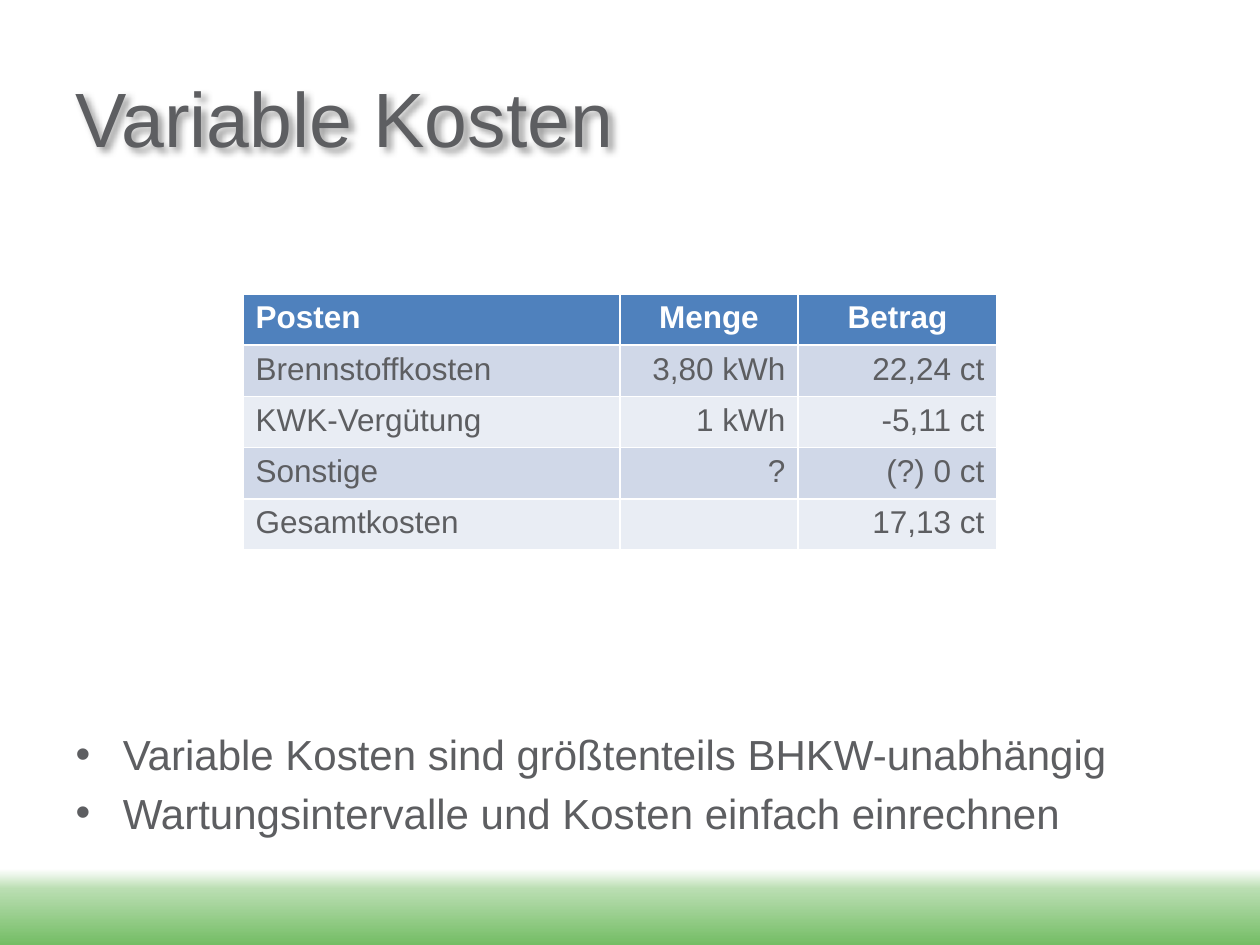
from copy import deepcopy

from lxml import etree
from pptx import Presentation
from pptx.dml.color import RGBColor
from pptx.enum.shapes import MSO_SHAPE
from pptx.enum.text import MSO_ANCHOR, PP_ALIGN
from pptx.oxml.ns import nsdecls, qn
from pptx.util import Emu, Pt

RECT = MSO_SHAPE.RECTANGLE
MIDDLE, BOTTOM = MSO_ANCHOR.MIDDLE, MSO_ANCHOR.BOTTOM
LEFT, CENTER, RIGHT = PP_ALIGN.LEFT, PP_ALIGN.CENTER, PP_ALIGN.RIGHT

PX_PER_INCH = 126
FONT = "Arial"
GREY, WHITE = "5D5E61", "FFFFFF"
HEADER_FILL, BAND_FILLS = "4F81BD", ("D0D8E8", "E9EDF4")
BAND_STOPS = [(0, WHITE), (0.26, "BADEB2"), (1, "74BD65")]
COLUMN_WIDTHS = (377, 178, 199)
ROWS = [
    ("Posten", "Menge", "Betrag"),
    ("Brennstoffkosten", "3,80 kWh", "22,24 ct"),
    ("KWK-Vergütung", "1 kWh", "-5,11 ct"),
    ("Sonstige", "?", "(?) 0 ct"),
    ("Gesamtkosten", "", "17,13 ct"),
]
BULLETS = [
    "Variable Kosten sind größtenteils BHKW-unabhängig",
    "Wartungsintervalle und Kosten einfach einrechnen",
]
TITLE_SHADOW = (
    f'<a:effectLst {nsdecls("a")}>'
    '<a:outerShdw blurRad="50800" dist="38100" dir="2700000" algn="tl" rotWithShape="0">'
    '<a:srgbClr val="000000"><a:alpha val="40000"/></a:srgbClr>'
    '</a:outerShdw></a:effectLst>'
)


def px(n):
    """Turn pixels into EMU."""
    return Emu(round(n * 914400 / PX_PER_INCH))


def rgb(value):
    """Turn a hex string into a colour."""
    return RGBColor.from_string(value)


def style(p, size, color, align=LEFT, bold=False):
    """Set the font and alignment of a paragraph."""
    p.alignment = align
    p.font.name = FONT
    p.font.size = Pt(size)
    p.font.bold = bold
    p.font.color.rgb = rgb(color)


def place(sp, box):
    """Move a shape into a pixel box."""
    sp.left, sp.top, sp.width, sp.height = map(px, box)


def add_footer_band(slide, box):
    """Draw the green gradient band behind everything else."""
    sp = slide.shapes.add_shape(RECT, *map(px, box))
    sp.shadow.inherit = False
    sp.line.fill.background()
    sp.fill.gradient()
    sp.fill.gradient_angle = 270
    stops = sp._element.spPr.find(".//" + qn("a:gsLst"))
    stops.append(deepcopy(stops[-1]))
    for stop, (position, color) in zip(sp.fill.gradient_stops, BAND_STOPS):
        stop.position = position
        stop.color.rgb = rgb(color)
    slide.shapes._spTree.insert(2, sp._element)


def add_title(slide, box, text):
    """Fill the title placeholder and give it a soft shadow."""
    sp = slide.shapes.title
    place(sp, box)
    tf = sp.text_frame
    tf.text = text
    tf.vertical_anchor = MIDDLE
    style(tf.paragraphs[0], 44, GREY)
    sp._element.spPr.append(etree.fromstring(TITLE_SHADOW))


def add_bullets(slide, box, lines):
    """Fill the body placeholder with bullets at its bottom."""
    sp = slide.placeholders[1]
    place(sp, box)
    tf = sp.text_frame
    tf.text = "\n".join(lines)
    tf.vertical_anchor = BOTTOM
    for p in tf.paragraphs:
        style(p, 24, GREY)
    tf.paragraphs[0].space_before = Pt(0)


def add_cost_table(slide, box, rows):
    """Add the cost table with a header and alternating row fills."""
    table = slide.shapes.add_table(len(rows), len(rows[0]), *map(px, box)).table
    for column, width in zip(table.columns, COLUMN_WIDTHS):
        column.width = px(width)
    for i, row in enumerate(rows):
        header = i == 0
        fill = HEADER_FILL if header else BAND_FILLS[(i - 1) % 2]
        for j, text in enumerate(row):
            cell = table.cell(i, j)
            cell.text = text
            cell.fill.solid()
            cell.fill.fore_color.rgb = rgb(fill)
            align = LEFT if j == 0 else CENTER if header else RIGHT
            style(cell.text_frame.paragraphs[0], 18, WHITE if header else GREY, align, header)


def main():
    """Build the slide and save it."""
    prs = Presentation()
    prs.slide_width, prs.slide_height = px(1260), px(945)
    slide = prs.slides.add_slide(prs.slide_layouts[1])
    add_footer_band(slide, (0, 869, 1260, 76))
    add_title(slide, (63, 38, 885, 157), "Variable Kosten")
    add_bullets(slide, (63, 220, 1134, 624), BULLETS)
    add_cost_table(slide, (243, 294, sum(COLUMN_WIDTHS), 256), ROWS)
    prs.save("out.pptx")


if __name__ == "__main__":
    main()
